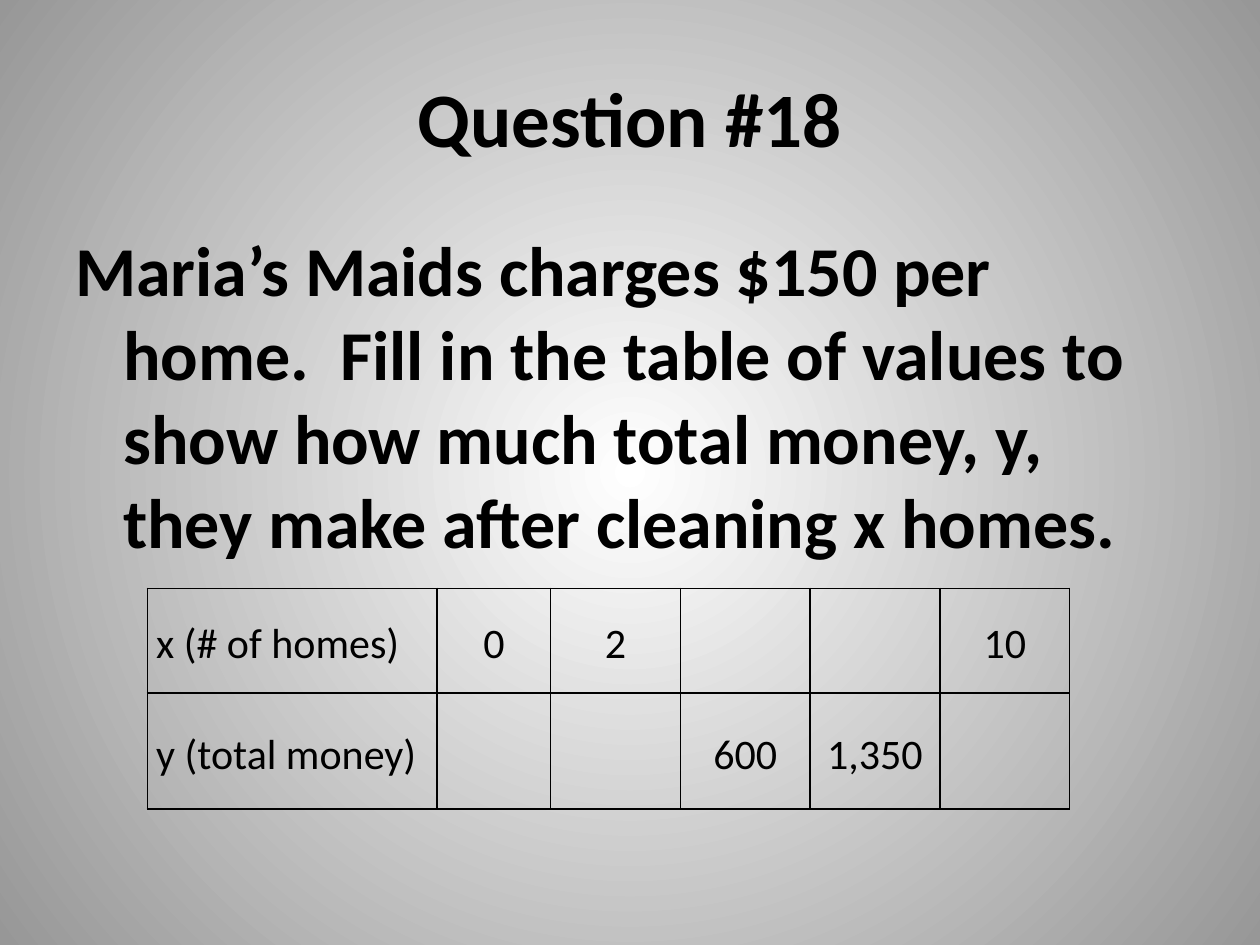
from lxml.etree import SubElement
from pptx import Presentation
from pptx.dml.color import RGBColor
from pptx.enum.text import MSO_ANCHOR, PP_ALIGN
from pptx.oxml.ns import qn
from pptx.util import Inches, Pt

FONT = "Calibri"
COLORS = {"ink": "000000", "center": "FFFFFF", "edge": "979797"}
COLUMN_WIDTHS = [2.3, 0.9] + [1.03] * 4
ROW_HEIGHTS = [0.83, 0.92]
VALUES = [
    ["x (# of homes)", "0", "2", "", "", "10"],
    ["y (total money)", "", "", "600", "1,350", ""],
]


def rgb(name):
    return RGBColor.from_string(COLORS[name])


def set_background(slide):
    """Fill the slide with a gradient that spreads from its center."""
    fill = slide.background.fill
    fill.gradient()
    for stop, name, position in zip(fill.gradient_stops, ("center", "edge"), (0, 1)):
        stop.color.rgb = rgb(name)
        stop.position = position
    lin = slide.element.find(".//" + qn("a:lin"))
    gradient = lin.getparent()
    gradient.remove(lin)
    path = SubElement(gradient, qn("a:path"), path="circle")
    SubElement(path, qn("a:fillToRect"), dict.fromkeys("ltrb", "50000"))


def style_paragraph(p, size, bold=False, align=PP_ALIGN.LEFT):
    p.alignment = align
    p.font.name = FONT
    p.font.size = Pt(size)
    p.font.bold = bold
    p.font.color.rgb = rgb("ink")


def add_text(slide, text, box, size, align=PP_ALIGN.LEFT, anchor=MSO_ANCHOR.TOP):
    tf = slide.shapes.add_textbox(*map(Inches, box)).text_frame
    tf.word_wrap = True
    tf.vertical_anchor = anchor
    p = tf.paragraphs[0]
    p.text = text
    style_paragraph(p, size, bold=True, align=align)
    return p


def set_hanging_indent(p, indent):
    p_pr = p._p.get_or_add_pPr()
    p_pr.set("marL", str(Inches(indent)))
    p_pr.set("indent", str(-Inches(indent)))


def set_borders(cell):
    tc_pr = cell._tc.get_or_add_tcPr()
    for index, side in enumerate(("lnL", "lnR", "lnT", "lnB")):
        line = SubElement(tc_pr, qn(f"a:{side}"), w=str(Pt(1)))
        fill = SubElement(line, qn("a:solidFill"))
        SubElement(fill, qn("a:srgbClr"), val=COLORS["ink"])
        tc_pr.insert(index, line)


def fill_cell(cell, text, align):
    cell.text = text
    cell.vertical_anchor = MSO_ANCHOR.MIDDLE
    cell.margin_left = cell.margin_right = Inches(0.07)
    cell.margin_top = cell.margin_bottom = 0
    cell.fill.background()
    p = cell.text_frame.paragraphs[0]
    style_paragraph(p, 24, align=align)
    p.line_spacing = 1.15
    set_borders(cell)


def add_value_table(slide, left, top):
    table = slide.shapes.add_table(
        len(ROW_HEIGHTS), len(COLUMN_WIDTHS), Inches(left), Inches(top),
        Inches(sum(COLUMN_WIDTHS)), Inches(sum(ROW_HEIGHTS))).table
    table.first_row = table.horz_banding = False
    for column, width in zip(table.columns, COLUMN_WIDTHS):
        column.width = Inches(width)
    for row, height, values in zip(table.rows, ROW_HEIGHTS, VALUES):
        row.height = Inches(height)
        for index, (cell, text) in enumerate(zip(row.cells, values)):
            fill_cell(cell, text, PP_ALIGN.CENTER if index else PP_ALIGN.LEFT)


def main():
    prs = Presentation()
    prs.slide_width, prs.slide_height = Inches(10), Inches(7.5)
    slide = prs.slides.add_slide(prs.slide_layouts[6])
    set_background(slide)
    add_text(slide, "Question #18", (0.5, 0.3, 9, 1.25), 44,
             PP_ALIGN.CENTER, MSO_ANCHOR.MIDDLE)
    problem = add_text(
        slide,
        "Maria’s Maids charges $150 per home.  Fill in the table of values to "
        "show how much total money, y, they make after cleaning x homes.",
        (0.5, 1.75, 9, 4.95), 40)
    set_hanging_indent(problem, 0.38)
    add_value_table(slide, 1.17, 4.67)
    prs.save("out.pptx")


if __name__ == "__main__":
    main()
